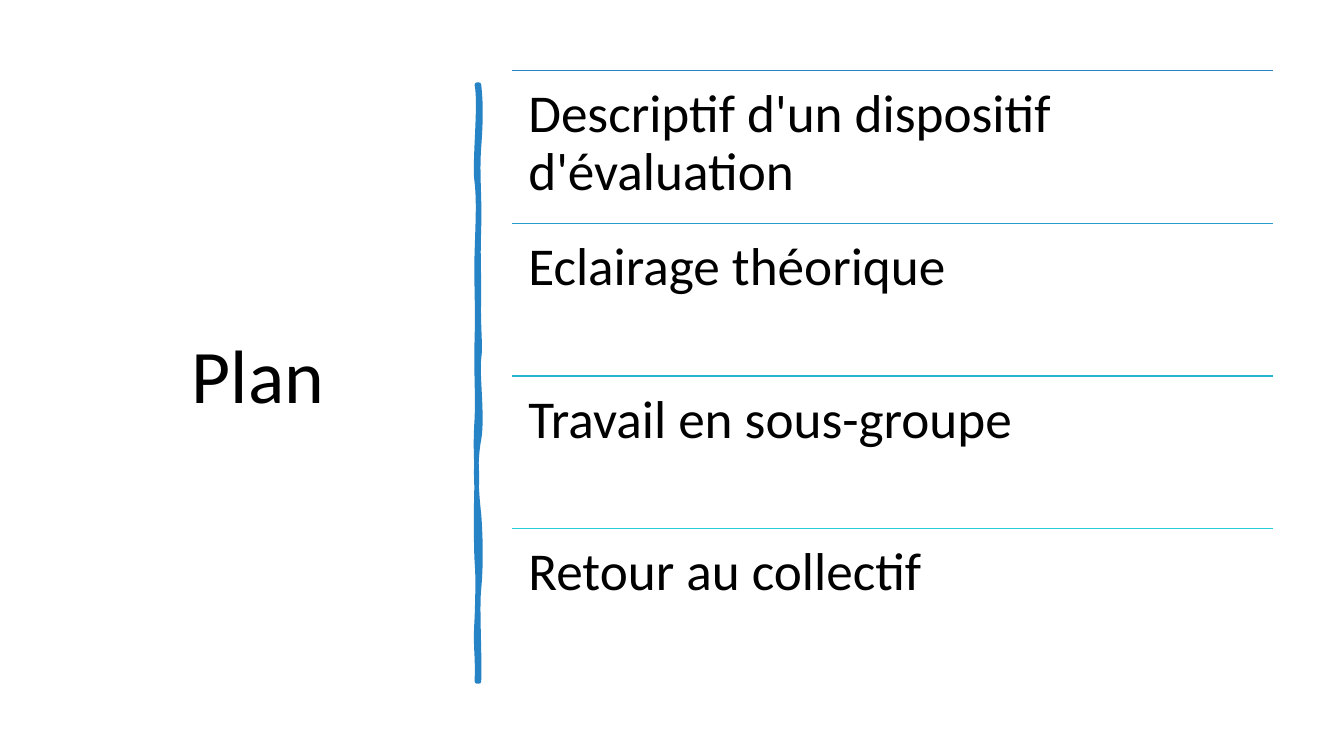
import pptx
import pptx.util
import pptx.dml.color
import pptx.enum.shapes
import pptx.enum.text
import pptx.oxml
import pptx.oxml.ns
import lxml.etree

Inches = pptx.util.Inches
Pt = pptx.util.Pt
qn = pptx.oxml.ns.qn

# Content
TITLE = "Plan"
AGENDA = [
    ("Descriptif d'un dispositif d'évaluation", "2683C6"),
    ("Eclairage théorique", "269BCC"),
    ("Travail en sous-groupe", "27B4D1"),
    ("Retour au collectif", "27CED7"),
]

# Brush stroke: start point, then cubic curves (two controls and an end point)
BRUSH_START = (4.75, 0.84)
BRUSH_EDGE = [
    (4.77, 1.02, 4.77, 1.19, 4.75, 1.46), (4.73, 1.73, 4.76, 1.95, 4.75, 2.26),
    (4.74, 2.57, 4.75, 2.62, 4.75, 2.94), (4.74, 3.25, 4.77, 3.42, 4.75, 3.56),
    (4.73, 3.7, 4.79, 4.14, 4.75, 4.36), (4.71, 4.57, 4.72, 4.84, 4.75, 5.1),
    (4.77, 5.36, 4.77, 5.64, 4.75, 5.84), (4.73, 6.03, 4.76, 6.5, 4.75, 6.76),
    (4.74, 6.76, 4.73, 6.76, 4.73, 6.76), (4.74, 6.46, 4.71, 6.44, 4.73, 6.13),
    (4.74, 5.83, 4.74, 5.7, 4.73, 5.57), (4.72, 5.44, 4.72, 4.95, 4.73, 4.77),
    (4.73, 4.59, 4.71, 4.45, 4.73, 4.15), (4.74, 3.86, 4.72, 3.73, 4.73, 3.35),
    (4.74, 2.98, 4.72, 2.81, 4.73, 2.5), (4.74, 2.18, 4.75, 2, 4.73, 1.81),
    (4.7, 1.63, 4.77, 1.04, 4.73, 0.84), (4.74, 0.84, 4.74, 0.84, 4.75, 0.84),
]
BRUSH_BODY = [
    (4.75, 1.15, 4.72, 1.25, 4.75, 1.52), (4.77, 1.79, 4.74, 1.97, 4.75, 2.08),
    (4.76, 2.2, 4.74, 2.55, 4.75, 2.94), (4.76, 3.33, 4.73, 3.43, 4.75, 3.62),
    (4.77, 3.81, 4.77, 3.97, 4.75, 4.3), (4.72, 4.63, 4.75, 4.74, 4.75, 5.16),
    (4.75, 5.57, 4.74, 5.53, 4.75, 5.78), (4.76, 6.03, 4.74, 6.47, 4.75, 6.76),
    (4.74, 6.75, 4.73, 6.75, 4.73, 6.76), (4.7, 6.49, 4.74, 6.32, 4.73, 6.13),
    (4.72, 5.95, 4.75, 5.69, 4.73, 5.39), (4.71, 5.1, 4.76, 5, 4.73, 4.71),
    (4.7, 4.42, 4.77, 4.2, 4.73, 3.86), (4.69, 3.51, 4.74, 3.25, 4.73, 3),
    (4.71, 2.75, 4.71, 2.59, 4.73, 2.38), (4.74, 2.16, 4.74, 1.85, 4.73, 1.64),
    (4.71, 1.43, 4.75, 1.21, 4.73, 0.84), (4.74, 0.84, 4.74, 0.84, 4.75, 0.84),
]

THEME = {
    "font": "Calibri", "text": "000000", "brush": "2683C6",
    "title_size": 54, "item_size": 38, "brush_width": 3.25, "rule_width": 1,
}

# Layout in inches
TITLE_BOX = (0.69, 0.7, 3.74, 6.11)
LIST_LEFT, LIST_TOP, LIST_WIDTH, LIST_HEIGHT = 5.08, 0.7, 7.55, 6.06
ITEM_INSET = 0.16


def color(value):
    return pptx.dml.color.RGBColor.from_string(value)


def add_text(slide, text, box, size, frame_format, alignment):
    shape = slide.shapes.add_textbox(*map(Inches, box))
    frame = shape.text_frame
    for name, value in {"word_wrap": True, **frame_format}.items():
        setattr(frame, name, value)
    paragraph = frame.paragraphs[0]
    paragraph.alignment = alignment
    paragraph.line_spacing = 0.9
    run = paragraph.add_run()
    run.text = text
    for name, value in {"name": THEME["font"], "size": Pt(size)}.items():
        setattr(run.font, name, value)
    run.font.color.rgb = color(THEME["text"])


def add_curves(outline, curves, origin):
    """Turn the straight segments of an outline into cubic curves."""
    for segment, curve in zip(outline.findall(qn("a:lnTo")), curves):
        bezier = lxml.etree.Element(qn("a:cubicBezTo"))
        for x, y in zip(curve[::2], curve[1::2]):
            lxml.etree.SubElement(bezier, qn("a:pt"), {
                "x": str(Inches(x) - origin[0]), "y": str(Inches(y) - origin[1])})
        outline.replace(segment, bezier)


def add_brush(slide):
    builder = slide.shapes.build_freeform(*map(Inches, BRUSH_START))
    ends = [(Inches(curve[4]), Inches(curve[5])) for curve in BRUSH_BODY]
    builder.add_line_segments(ends, close=True)
    shape = builder.convert_to_shape()
    shape.shadow.inherit = False
    shape.fill.solid()
    shape.fill.fore_color.rgb = color(THEME["brush"])
    shape.line.color.rgb = color(THEME["brush"])
    shape.line.width = Pt(THEME["brush_width"])

    # One outline carries the line, the other the fill
    body = shape._element.xpath(".//a:path")[0]
    edge = pptx.oxml.parse_xml(lxml.etree.tostring(body))
    body.addprevious(edge)
    edge.set("fill", "none")
    body.set("stroke", "0")
    for outline, curves in ((edge, BRUSH_EDGE), (body, BRUSH_BODY)):
        add_curves(outline, curves, (shape.left, shape.top))


def add_rule(slide, top, rule_color):
    rule = slide.shapes.add_connector(
        pptx.enum.shapes.MSO_CONNECTOR.STRAIGHT,
        Inches(LIST_LEFT), Inches(top), Inches(LIST_LEFT + LIST_WIDTH), Inches(top))
    rule.line.color.rgb = color(rule_color)
    rule.line.width = Pt(THEME["rule_width"])
    lxml.etree.SubElement(rule._element.spPr, qn("a:effectLst"))


def main():
    presentation = pptx.Presentation()
    presentation.slide_width = Inches(13.33)
    presentation.slide_height = Inches(7.5)
    slide = presentation.slides.add_slide(presentation.slide_layouts[6])
    anchors = pptx.enum.text.MSO_ANCHOR
    alignments = pptx.enum.text.PP_ALIGN

    # Title
    title_format = {"vertical_anchor": anchors.MIDDLE,
                    "auto_size": pptx.enum.text.MSO_AUTO_SIZE.TEXT_TO_FIT_SHAPE}
    add_text(slide, TITLE, TITLE_BOX, THEME["title_size"],
             title_format, alignments.CENTER)

    # Brush stroke
    add_brush(slide)

    # Agenda rows, each under its rule
    item_format = {f"margin_{side}": Inches(ITEM_INSET)
                   for side in ("left", "top", "right", "bottom")}
    item_format["vertical_anchor"] = anchors.TOP
    row_height = LIST_HEIGHT / len(AGENDA)
    for index, (text, rule_color) in enumerate(AGENDA):
        top = LIST_TOP + index * row_height
        add_rule(slide, top, rule_color)
        add_text(slide, text, (LIST_LEFT, top, LIST_WIDTH, row_height),
                 THEME["item_size"], item_format, alignments.LEFT)

    presentation.save("out.pptx")


if __name__ == "__main__":
    main()
